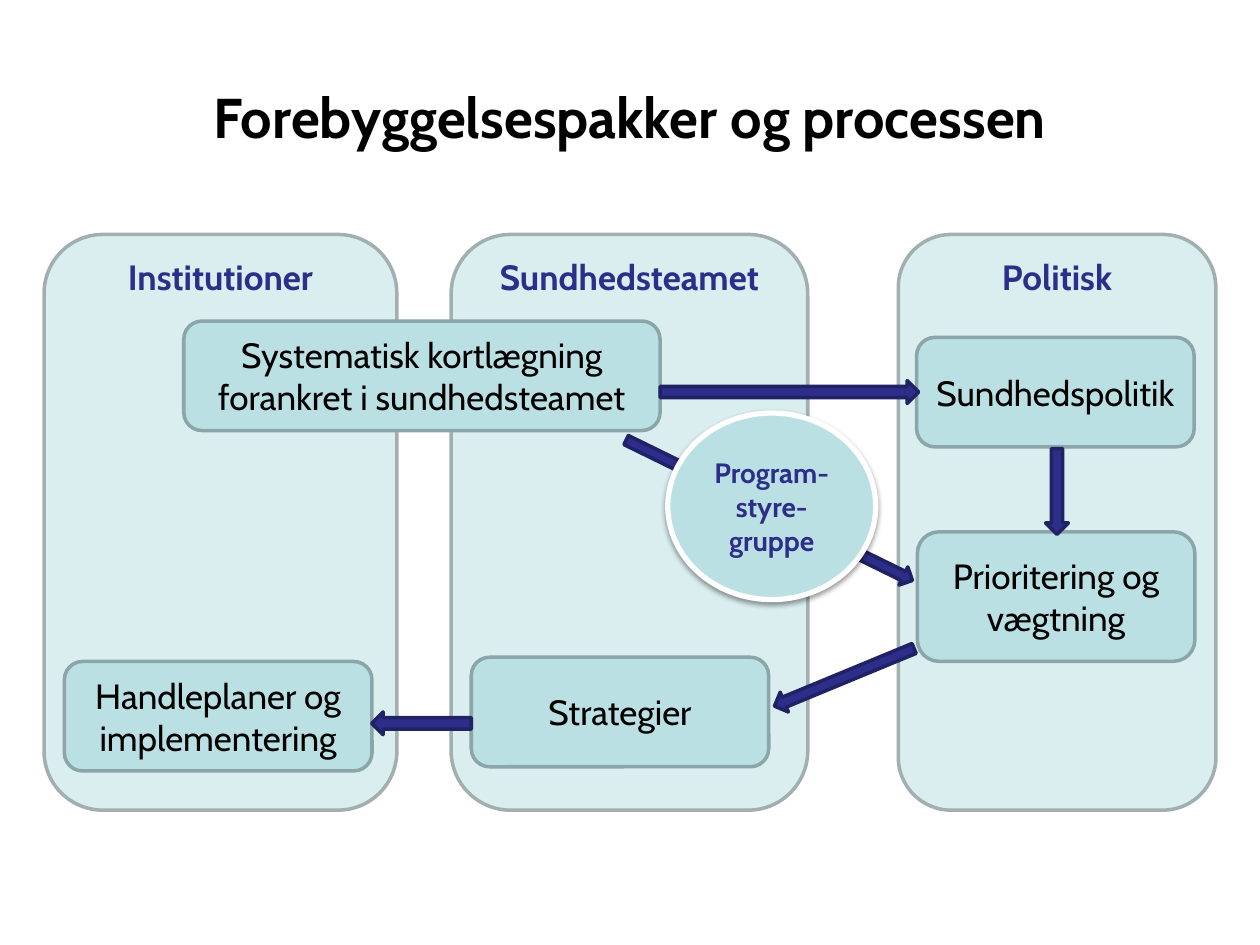
from math import atan2, degrees, hypot

from lxml.etree import SubElement
from pptx import Presentation
from pptx.dml.color import RGBColor
from pptx.enum.shapes import MSO_SHAPE as Preset
from pptx.enum.text import MSO_ANCHOR as Anchor, PP_ALIGN as Align
from pptx.oxml.ns import qn
from pptx.util import Pt

FONT = "Cabin"
BLACK, NAVY, DARK_NAVY, WHITE = "000000", "2D2D8A", "212166", "FFFFFF"
PALE, PALE_EDGE = "DAEDEF", "A1AFB1"
TEAL, TEAL_EDGE = "BBE0E3", "8AA6A8"

COLUMN_TOP, COLUMN_HEIGHT = 134, 329
COLUMNS = [
    ("Politisk", 513.3, 181.5),
    ("Sundhedsteamet", 257.8, 203.8),
    ("Institutioner", 25.2, 201.6),
]
STEPS = [
    ("Systematisk kortlægning forankret i sundhedsteamet", (105, 183.5, 272.2, 62.6)),
    ("Prioritering og vægtning", (524.2, 303.9, 158.6, 74)),
    ("Sundhedspolitik", (523.8, 192.8, 158.6, 62.6)),
    ("Strategier", (269.3, 375.6, 170, 62.6)),
    ("Handleplaner og implementering", (36.8, 378, 175.8, 62.6)),
]
ARROWS = [
    ((377.3, 224), (524.9, 224), 13),
    ((269.3, 413.3), (212.4, 413.3), 13),
    ((522.3, 370.5), (442.5, 403.5), 12.2),
    ((604, 256.3), (604, 305.3), 13),
    ((357.8, 251.5), (521.4, 331.7), 11.5),
]


def color(hex_code):
    return RGBColor.from_string(hex_code)


def points(box):
    return [Pt(length) for length in box]


def write(shape, text, size, hex_code, bold=False, anchor=Anchor.MIDDLE):
    frame = shape.text_frame
    frame.word_wrap = True
    frame.vertical_anchor = anchor
    paragraph = frame.paragraphs[0]
    paragraph.alignment = Align.CENTER
    run = paragraph.add_run()
    run.text = text
    run.font.name = FONT
    run.font.size = Pt(size)
    run.font.bold = bold
    run.font.color.rgb = color(hex_code)


def add_preset(slide, preset, box, fill, edge, edge_width=2):
    shape = slide.shapes.add_shape(preset, *points(box))
    shape.shadow.inherit = False
    shape.fill.solid()
    shape.fill.fore_color.rgb = color(fill)
    shape.line.color.rgb = color(edge)
    shape.line.width = Pt(edge_width)
    return shape


def add_title(slide, text, box):
    title = slide.shapes.title
    title.left, title.top, title.width, title.height = points(box)
    write(title, text, 32, BLACK, bold=True)


def add_heading(slide, text, box):
    heading = slide.shapes.add_textbox(*points(box))
    write(heading, text, 20, NAVY, bold=True, anchor=Anchor.BOTTOM)


def add_step(slide, text, box):
    step = add_preset(slide, Preset.ROUNDED_RECTANGLE, box, TEAL, TEAL_EDGE)
    write(step, text, 20, BLACK)


def add_arrow(slide, start, end, thickness):
    across, down = end[0] - start[0], end[1] - start[1]
    length = hypot(across, down)
    left = (start[0] + end[0] - length) / 2
    top = (start[1] + end[1] - thickness) / 2
    box = (left, top, length, thickness)
    arrow = add_preset(slide, Preset.RIGHT_ARROW, box, NAVY, DARK_NAVY)
    arrow.rotation = degrees(atan2(down, across))


def add_drop_shadow(shape):
    effects = shape._element.spPr.find(qn("a:effectLst"))
    shadow = SubElement(effects, qn("a:outerShdw"), blurRad=str(Pt(3.1)),
                        dist=str(Pt(1.6)), dir="5400000", rotWithShape="0")
    shade = SubElement(shadow, qn("a:srgbClr"), val=BLACK)
    SubElement(shade, qn("a:alpha"), val="38000")


def add_steering_group(slide, text, box):
    group = add_preset(slide, Preset.OVAL, box, TEAL, WHITE, 3)
    add_drop_shadow(group)
    frame = group.text_frame
    frame.margin_left = frame.margin_right = Pt(3)
    frame.margin_top = frame.margin_bottom = Pt(3)
    write(group, text, 16, NAVY, bold=True)


def add_process(slide):
    for name, left, width in COLUMNS:
        box = (left, COLUMN_TOP, width, COLUMN_HEIGHT)
        add_preset(slide, Preset.ROUNDED_RECTANGLE, box, PALE, PALE_EDGE)
    for name, left, width in COLUMNS:
        add_heading(slide, name, (left, 121, width, 52.5))
    for text, box in STEPS:
        add_step(slide, text, box)
    for start, end, thickness in ARROWS:
        add_arrow(slide, start, end, thickness)
    add_steering_group(slide, "Program-styre-gruppe", (381.6, 236, 118.8, 106.6))


def main():
    presentation = Presentation()
    presentation.slide_width, presentation.slide_height = Pt(720), Pt(540)
    slide = presentation.slides.add_slide(presentation.slide_layouts[5])
    add_title(slide, "Forebyggelsespakker og processen", (36, 21.6, 648, 90))
    add_process(slide)
    presentation.save("out.pptx")


if __name__ == "__main__":
    main()
